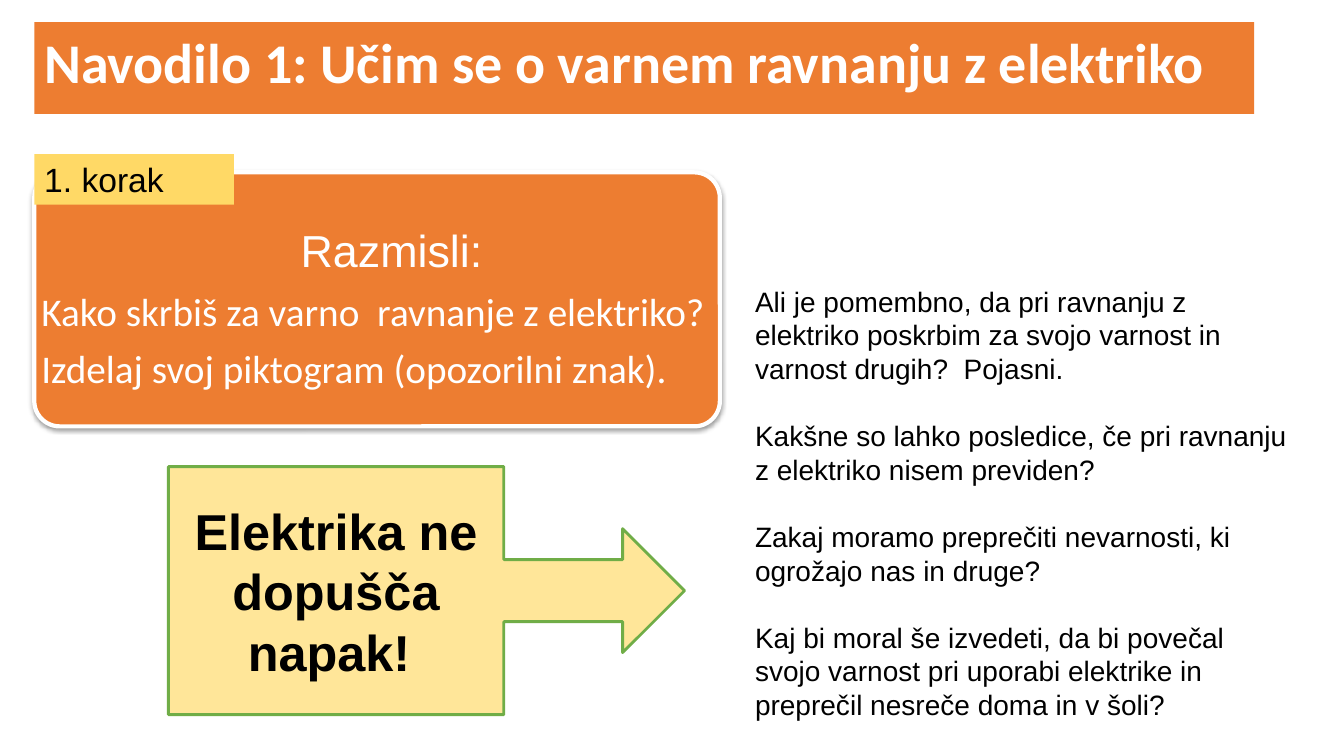
from dataclasses import dataclass

from lxml import etree
from pptx import Presentation
from pptx.dml.color import RGBColor
from pptx.enum.shapes import MSO_SHAPE
from pptx.enum.text import MSO_ANCHOR, PP_ALIGN
from pptx.oxml.ns import qn
from pptx.util import Pt

RECT = MSO_SHAPE.RECTANGLE
ROUNDED = MSO_SHAPE.ROUNDED_RECTANGLE
ARROW_CALLOUT = MSO_SHAPE.RIGHT_ARROW_CALLOUT
TOP, MIDDLE = MSO_ANCHOR.TOP, MSO_ANCHOR.MIDDLE
LEFT, CENTER = PP_ALIGN.LEFT, PP_ALIGN.CENTER
PX = 9144


@dataclass(frozen=True)
class Theme:
    orange: str = "ED7D31"
    gold: str = "FFD966"
    cream: str = "FFE699"
    green: str = "70AD47"
    white: str = "FFFFFF"
    black: str = "000000"
    heading_font: str = "Calibri"
    body_font: str = "Arial"
    title: int = 40
    warning: int = 36
    prompt: int = 32
    task: int = 28
    step: int = 24
    question: int = 20


THEME = Theme()

QUESTIONS = [
    "Ali je pomembno, da pri ravnanju z elektriko poskrbim za svojo varnost in varnost drugih?  Pojasni.",
    "Kakšne so lahko posledice, če pri ravnanju z elektriko nisem previden?",
    "Zakaj moramo preprečiti nevarnosti, ki ogrožajo nas in druge?",
    "Kaj bi moral še izvedeti, da bi povečal svojo varnost pri uporabi elektrike in preprečil nesreče doma in v šoli?",
]
TASKS = [
    "Kako skrbiš za varno  ravnanje z elektriko?",
    "Izdelaj svoj piktogram (opozorilni znak).",
]


def emu(box):
    return [length * PX for length in box]


def add_panel(slide, kind, box, fill, line=None, line_width=0):
    panel = slide.shapes.add_shape(kind, *emu(box))
    panel.shadow.inherit = False
    panel.fill.solid()
    panel.fill.fore_color.rgb = RGBColor.from_string(fill)
    if line:
        panel.line.color.rgb = RGBColor.from_string(line)
        panel.line.width = Pt(line_width)
    else:
        panel.line.fill.background()
    return panel


def set_frame(holder, anchor=TOP, inset=None):
    frame = holder.text_frame
    frame.word_wrap = True
    frame.vertical_anchor = anchor
    if inset is not None:
        frame.margin_left = frame.margin_right = inset * PX
        frame.margin_top = frame.margin_bottom = inset * PX
    return frame


def write(frame, text, size, color=THEME.black, font=THEME.body_font,
          bold=False, align=LEFT, after=0, spacing=1.0):
    first = frame.paragraphs[0]
    paragraph = frame.add_paragraph() if first.runs else first
    paragraph.alignment = align
    paragraph.space_after = Pt(after)
    paragraph.line_spacing = spacing
    run = paragraph.add_run()
    run.text = text
    run.font.size = Pt(size)
    run.font.name = font
    run.font.bold = bold
    run.font.color.rgb = RGBColor.from_string(color)


def cast_shadow(panel, blur, distance, opacity):
    effects = panel.element.spPr.find(qn("a:effectLst"))
    shadow = etree.SubElement(
        effects, qn("a:outerShdw"), blurRad=str(Pt(blur)), dist=str(Pt(distance)),
        dir=str(90 * 60000), algn="ctr", rotWithShape="0")
    color = etree.SubElement(shadow, qn("a:srgbClr"), val=THEME.black)
    etree.SubElement(color, qn("a:alpha"), val=str(opacity * 1000))


def draw_warning(slide, box):
    callout = add_panel(slide, ARROW_CALLOUT, box, THEME.cream, THEME.green, 2)
    write(set_frame(callout, MIDDLE), "Elektrika ne dopušča napak! ",
          THEME.warning, bold=True, align=CENTER)


def draw_questions(slide, box):
    frame = set_frame(slide.shapes.add_textbox(*emu(box)))
    for question in QUESTIONS:
        gap = 0 if question == QUESTIONS[-1] else 24
        write(frame, question, THEME.question, after=gap)


def draw_step(slide, box):
    left, top, width, height = box
    label_overlap, text_drop, text_overhang = 18, 22, 41
    card = add_panel(slide, ROUNDED, box, THEME.orange, THEME.white, 3)
    card.adjustments[0] = 0.1
    cast_shadow(card, blur=3.1, distance=1.6, opacity=38)

    text_box = (left, top + text_drop, width + text_overhang, height - text_drop)
    frame = set_frame(slide.shapes.add_textbox(*emu(text_box)), MIDDLE, inset=7)
    write(frame, "Razmisli: ", THEME.prompt, THEME.white,
          align=CENTER, after=11, spacing=0.9)
    for task in TASKS:
        write(frame, task, THEME.task, THEME.white, THEME.heading_font,
              after=10, spacing=0.9)

    label = add_panel(slide, RECT, (left, top - label_overlap, 198, 50), THEME.gold)
    write(set_frame(label), "1. korak", THEME.step)


def draw_title(slide, box):
    banner = add_panel(slide, RECT, box, THEME.orange)
    write(set_frame(banner), "Navodilo 1: Učim se o varnem ravnanju z elektriko",
          THEME.title, THEME.white, THEME.heading_font, bold=True)


def main():
    deck = Presentation()
    deck.slide_width, deck.slide_height = emu((1333, 750))
    slide = deck.slides.add_slide(deck.slide_layouts[6])
    draw_warning(slide, (167, 463, 512, 246))
    draw_questions(slide, (739, 277, 556, 471))
    draw_step(slide, (34, 171, 680, 252))
    draw_title(slide, (34, 22, 1210, 91))
    deck.save("out.pptx")


if __name__ == "__main__":
    main()
